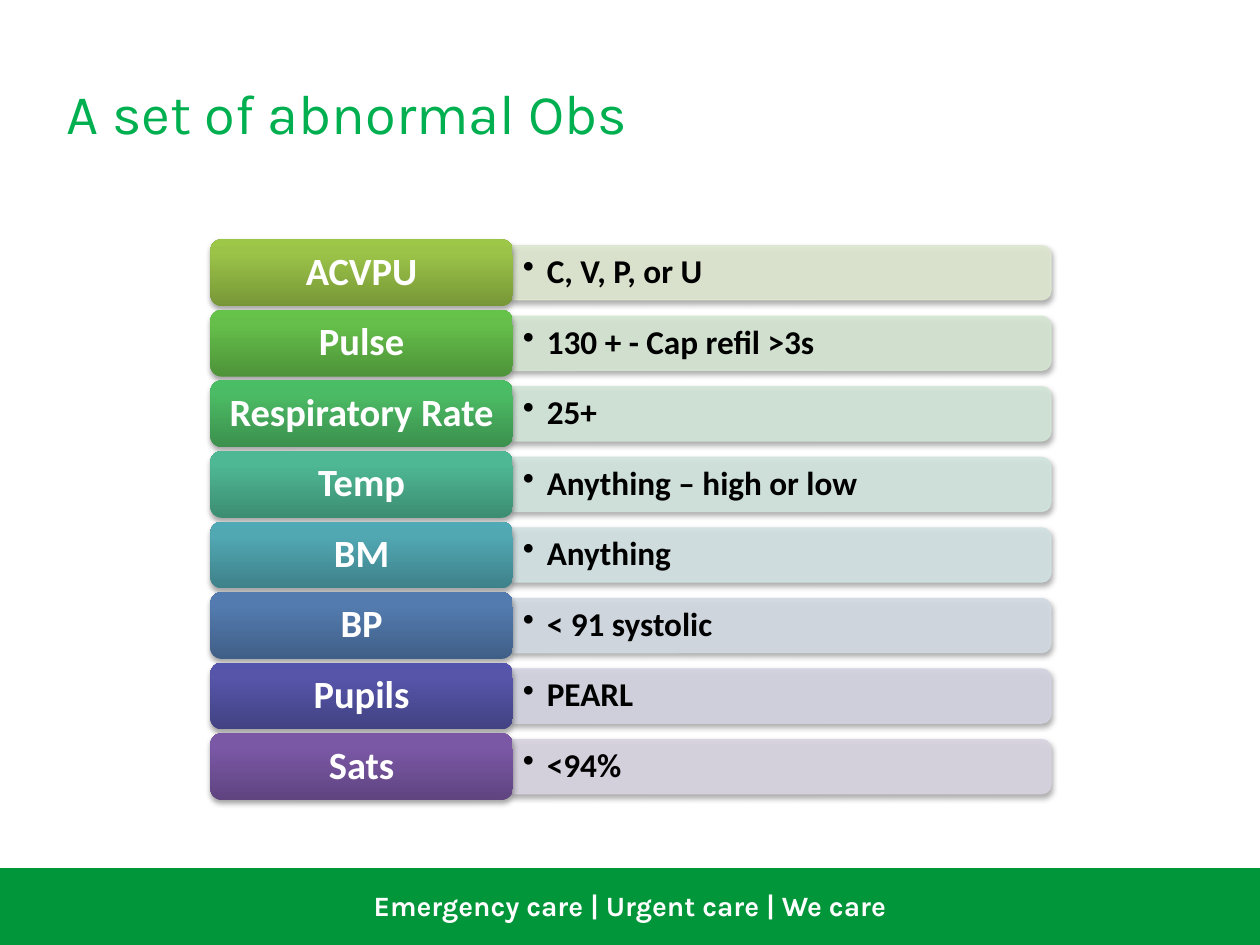
from lxml import etree
from pptx import Presentation, util as u
from pptx.dml.color import RGBColor
from pptx.enum import shapes, text
from pptx.oxml import parse_xml
from pptx.oxml.ns import qn

TITLE = "A set of abnormal Obs"
FOOTER = "Emergency care | Urgent care | We care"
# label, finding, bar colour, label gradient from bottom to top
ROWS = [
    ("ACVPU", "C, V, P, or U", "DEE7D1", ("779737", "9BC348", "9DC746")),
    ("Pulse", "130 + - Cap refil >3s", "D5E6D2", ("4E9339", "65BF4A", "64C348")),
    ("Respiratory Rate", "25+", "D2E5D7", ("3B904D", "4CBB65", "4ABE64")),
    ("Temp", "Anything – high or low", "D2E4DE", ("3C8D72", "4EB794", "4DBA96")),
    ("BM", "Anything", "D2E1E3", ("3E818A", "51A8B3", "4FAAB6")),
    ("BP", "< 91 systolic", "D2DAE2", ("405F87", "537BAF", "527CB1")),
    ("Pupils", "PEARL", "D3D3E1", ("424283", "5655AA", "5554AD")),
    ("Sats", "<94%", "D8D3E0", ("5F4480", "7B58A6", "7C57A8")),
]
STOPS = (0, 80, 100)
W, H = 10, 7.5
LEFT, TOP, PITCH = 1.67, 1.9, 0.56
LABEL_W, LABEL_H = 2.4, 0.53
BAR_W, BAR_H = 4.27, 0.43
NS = 'xmlns:a="http://schemas.openxmlformats.org/drawingml/2006/main"'


def rgb(value):
    return RGBColor.from_string(value)


def box(x, y, w, h):
    return [u.Inches(v) for v in (x, y, w, h)]


def add_shape(kind, x, y, w, h):
    sp = s.shapes.add_shape(kind, *box(x, y, w, h))
    sp.shadow.inherit = False
    return sp


def write(sp, words, font, size, color, bold=True, align=text.PP_ALIGN.LEFT,
          anchor=text.MSO_ANCHOR.MIDDLE, insets=(0.1, 0.05)):
    tf = sp.text_frame
    tf.word_wrap = True
    tf.vertical_anchor = anchor
    tf.margin_left = tf.margin_right = u.Inches(insets[0])
    tf.margin_top = tf.margin_bottom = u.Inches(insets[1])
    tf.text = words
    p = tf.paragraphs[0]
    p.alignment = align
    f = p.runs[0].font
    f.name, f.size, f.bold = font, u.Pt(size), bold
    f.color.rgb = rgb(color)
    return p


def soft_shadow(sp):
    effects = sp._element.spPr.find(qn("a:effectLst"))
    effects.append(parse_xml(
        f'<a:outerShdw {NS} blurRad="40000" dist="23000" dir="5400000" rotWithShape="0">'
        '<a:srgbClr val="000000"><a:alpha val="35000"/></a:srgbClr></a:outerShdw>'))


def gradient(sp, colors):
    sp.fill.gradient()
    sp.fill.gradient_angle = 90
    stops = sp._element.spPr.find(qn("a:gradFill")).find(qn("a:gsLst"))
    for old in list(stops):
        stops.remove(old)
    for pos, color in zip(STOPS, colors):
        gs = etree.SubElement(stops, qn("a:gs"), pos=str(pos * 1000))
        etree.SubElement(gs, qn("a:srgbClr"), val=color)


def set_alpha(fill_parent, percent):
    color = fill_parent.find(qn("a:solidFill"))[0]
    etree.SubElement(color, qn("a:alpha"), val=str(percent * 1000))


def add_bar(mid, color):
    # upright shape turned a quarter, so its round corners face right
    cx = LEFT + LABEL_W + BAR_W / 2
    sp = add_shape(shapes.MSO_SHAPE.ROUND_2_SAME_RECTANGLE,
                   cx - BAR_H / 2, mid - BAR_W / 2, BAR_H, BAR_W)
    sp.rotation = 90
    sp.fill.solid()
    sp.fill.fore_color.rgb = sp.line.color.rgb = rgb(color)
    sp.line.width = u.Pt(0.75)
    set_alpha(sp._element.spPr, 90)
    set_alpha(sp._element.spPr.find(qn("a:ln")), 90)
    soft_shadow(sp)


def add_finding(mid, words):
    sp = s.shapes.add_textbox(*box(LEFT + LABEL_W, mid - 0.19, BAR_W - 0.02, 0.38))
    p = write(sp, words, "Calibri", 19, "000000", insets=(0.08, 0.04))
    p.line_spacing = 0.9
    pPr = p._p.get_or_add_pPr()
    indent = u.Inches(0.19)
    pPr.set("marL", str(indent))
    pPr.set("indent", str(-indent))
    etree.SubElement(pPr, qn("a:buChar"), char="•")


def add_label(y, words, colors):
    sp = add_shape(shapes.MSO_SHAPE.ROUNDED_RECTANGLE, LEFT, y, LABEL_W, LABEL_H)
    gradient(sp, colors)
    sp.line.fill.background()
    soft_shadow(sp)
    p = write(sp, words, "Calibri", 22, "FFFFFF", align=text.PP_ALIGN.CENTER)
    p.line_spacing = 0.9


prs = Presentation()
prs.slide_width, prs.slide_height = u.Inches(W), u.Inches(H)
s = prs.slides.add_slide(prs.slide_layouts[5])

# Footer band
band = add_shape(shapes.MSO_SHAPE.RECTANGLE, 0, 6.9, W, 0.6)
band.fill.solid()
band.fill.fore_color.rgb = band.line.color.rgb = rgb("009639")
band.line.width = u.Pt(2)
write(s.shapes.add_textbox(*box(0, 7, W, 0.37)), FOOTER, "Karla", 16, "FFFFFF",
      align=text.PP_ALIGN.CENTER, anchor=text.MSO_ANCHOR.TOP)

# Title
title = s.shapes.title
title.left, title.top, title.width, title.height = box(0.43, 0.52, 8.13, 1.25)
write(title, TITLE, "Karla", 32, "00B050", bold=False,
      anchor=text.MSO_ANCHOR.TOP, insets=(0.1, 0.1))

# Observation rows
for i, (label, finding, bar_color, label_colors) in enumerate(ROWS):
    y = TOP + i * PITCH
    mid = y + LABEL_H / 2
    add_bar(mid, bar_color)
    add_finding(mid, finding)
    add_label(y, label, label_colors)

prs.save("out.pptx")
